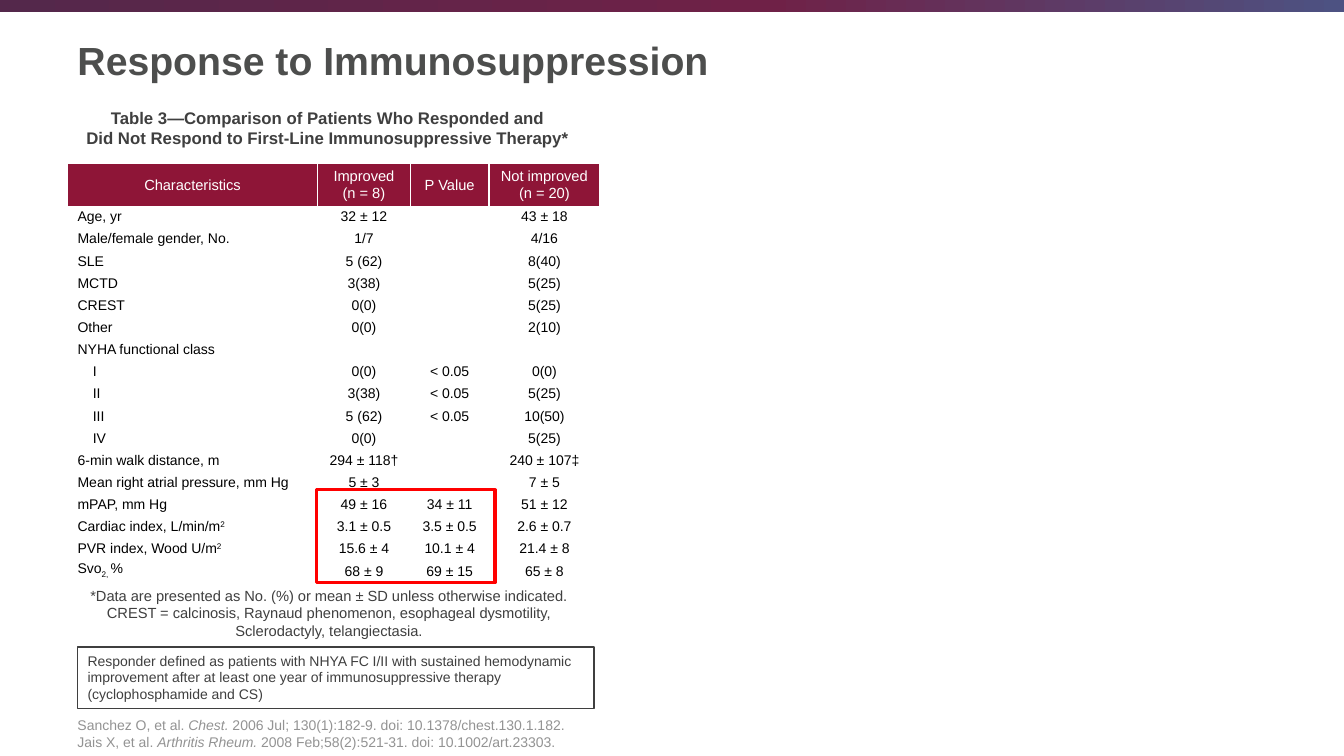
from copy import deepcopy

from pptx import Presentation
from pptx.dml.color import RGBColor
from pptx.enum.shapes import MSO_SHAPE
from pptx.enum.text import MSO_ANCHOR, PP_ALIGN
from pptx.oxml.ns import qn
from pptx.util import Inches, Pt

COLORS = {
    "title": "4D4E4D", "text": "3F3F3F", "source": "939393", "black": "000000",
    "white": "FFFFFF", "header": "8E1537", "highlight": "FF0000",
}
BAND_STOPS = [(0, "54284B"), (0.57, "6F2147"), (1, "4D5282")]

TITLE = ["Response to Immunosuppression"]
CAPTION = [
    "Table 3―Comparison of Patients Who Responded and",
    "Did Not Respond to First-Line Immunosuppressive Therapy*",
]
FOOTNOTE = [
    "*Data are presented as No. (%) or mean ± SD unless otherwise indicated.",
    "CREST = calcinosis, Raynaud phenomenon, esophageal dysmotility,",
    "Sclerodactyly, telangiectasia.",
]
DEFINITION = [
    "Responder defined as patients with NHYA FC I/II with sustained hemodynamic "
    "improvement after at least one year of immunosuppressive therapy "
    "(cyclophosphamide and CS)"
]
SOURCES = [
    [("Sanchez O, et al. ", ""), ("Chest.", "italic"),
     (" 2006 Jul; 130(1):182-9. doi: 10.1378/chest.130.1.182.", "")],
    [("Jais X, et al. ", ""), ("Arthritis Rheum.", "italic"),
     (" 2008 Feb;58(2):521-31. doi: 10.1002/art.23303.", "")],
]
HEADER = [["Characteristics"], ["Improved", "(n = 8)"], ["P Value"], ["Not improved", "(n = 20)"]]
ROWS = [
    ("Age, yr", "32 ± 12", "", "43 ± 18"),
    ("Male/female gender, No.", "1/7", "", "4/16"),
    ("SLE", "5 (62)", "", "8(40)"),
    ("MCTD", "3(38)", "", "5(25)"),
    ("CREST", "0(0)", "", "5(25)"),
    ("Other", "0(0)", "", "2(10)"),
    ("NYHA functional class", "", "", ""),
    ("I", "0(0)", "< 0.05", "0(0)"),
    ("II", "3(38)", "< 0.05", "5(25)"),
    ("III", "5 (62)", "< 0.05", "10(50)"),
    ("IV", "0(0)", "", "5(25)"),
    ("6-min walk distance, m", "294 ± 118†", "", "240 ± 107‡"),
    ("Mean right atrial pressure, mm Hg", "5 ± 3", "", "7 ± 5"),
    ("mPAP, mm Hg", "49 ± 16", "34 ± 11", "51 ± 12"),
    ([("Cardiac index, L/min/m", ""), ("2", "super")], "3.1 ± 0.5", "3.5 ± 0.5", "2.6 ± 0.7"),
    ([("PVR index, Wood U/m", ""), ("2", "super")], "15.6 ± 4", "10.1 ± 4", "21.4 ± 8"),
    ([("Svo", ""), ("2, ", "sub"), ("%", "")], "68 ± 9", "69 ± 15", "65 ± 8"),
]
CLASSES = ["I", "II", "III", "IV"]
COLUMN_WIDTHS = [2.48, 0.92, 0.78, 1.1]
HEADER_HEIGHT, ROW_HEIGHT = 0.43, 0.22
BASELINES = {"super": "30000", "sub": "-25000"}


def rgb(name):
    return RGBColor.from_string(COLORS[name])


def write(frame, lines, size, color, align=PP_ALIGN.LEFT, bold=False, spacing=None):
    for index, line in enumerate(lines):
        para = frame.add_paragraph() if index else frame.paragraphs[0]
        para.alignment = align
        para.line_spacing = spacing
        para.font.name = "Arial"
        para.font.size = Pt(size)
        para.font.bold = bold
        para.font.color.rgb = rgb(color)
        spans = [(line, "")] if isinstance(line, str) else line
        for text, style in spans:
            if not text:
                continue
            span = para.add_run()
            span.text = text
            if style == "italic":
                span.font.italic = True
            elif style:
                span.font._element.set("baseline", BASELINES[style])


def add_text(page, place, lines, size, color, anchor=MSO_ANCHOR.TOP, wrap=True, **style):
    box = page.shapes.add_textbox(*map(Inches, place))
    box.text_frame.word_wrap = wrap
    box.text_frame.vertical_anchor = anchor
    write(box.text_frame, lines, size, color, **style)


def add_rectangle(page, place):
    shape = page.shapes.add_shape(MSO_SHAPE.RECTANGLE, *map(Inches, place))
    shape.shadow.inherit = False
    return shape


def add_frame(page, place, color, width):
    frame = add_rectangle(page, place)
    frame.fill.background()
    frame.line.color.rgb = rgb(color)
    frame.line.width = Pt(width)
    return frame


def add_band(page):
    band = add_rectangle(page, (0, 0, 13.33, 0.12))
    band.line.fill.background()
    band.fill.gradient()
    band.fill.gradient_angle = 0
    stop_list = band._element.spPr.find(".//" + qn("a:gsLst"))
    stop_list.append(deepcopy(stop_list[-1]))
    for stop, (position, color) in zip(band.fill.gradient_stops, BAND_STOPS):
        stop.position = position
        stop.color.rgb = RGBColor.from_string(color)


def add_comparison(page):
    height = HEADER_HEIGHT + ROW_HEIGHT * len(ROWS)
    place = (0.67, 1.62, sum(COLUMN_WIDTHS), height)
    table = page.shapes.add_table(len(ROWS) + 1, len(HEADER), *map(Inches, place)).table
    for column, width in zip(table.columns, COLUMN_WIDTHS):
        column.width = Inches(width)
    for r, values in enumerate([HEADER, *ROWS]):
        table.rows[r].height = Inches(ROW_HEIGHT if r else HEADER_HEIGHT)
        for c, value in enumerate(values):
            cell = table.cell(r, c)
            cell.vertical_anchor = MSO_ANCHOR.MIDDLE
            cell.margin_top = cell.margin_bottom = 0
            cell.margin_left = Inches(0.25 if value in CLASSES else 0.1)
            cell.fill.solid()
            cell.fill.fore_color.rgb = rgb("white" if r else "header")
            if r:
                align = PP_ALIGN.CENTER if c else PP_ALIGN.LEFT
                write(cell.text_frame, [value], 10, "black", align, spacing=Pt(10))
            else:
                write(cell.text_frame, value, 10.5, "white", PP_ALIGN.CENTER)


def main():
    deck = Presentation()
    deck.slide_width, deck.slide_height = Inches(13.33), Inches(7.5)
    page = deck.slides.add_slide(deck.slide_layouts[6])
    add_band(page)
    add_text(page, (0.67, 0.22, 11.75, 0.74), TITLE, 28, "title", MSO_ANCHOR.MIDDLE, bold=True)
    definition = add_frame(page, (0.77, 6.42, 5.12, 0.61), "text", 1)
    definition.text_frame.word_wrap = True
    definition.text_frame.vertical_anchor = MSO_ANCHOR.TOP
    write(definition.text_frame, DEFINITION, 10, "text")
    add_text(page, (0.67, 7.01, 11.75, 0.48), SOURCES, 10, "source", MSO_ANCHOR.BOTTOM)
    add_comparison(page)
    add_text(page, (0.73, 1.02, 5.04, 0.5), CAPTION, 12, "text", wrap=False,
             align=PP_ALIGN.CENTER, bold=True)
    add_text(page, (0.63, 5.77, 5.27, 0.63), FOOTNOTE, 10.5, "text", align=PP_ALIGN.CENTER)
    add_frame(page, (3.14, 4.86, 1.77, 0.92), "highlight", 2.25)
    deck.save("out.pptx")


if __name__ == "__main__":
    main()
